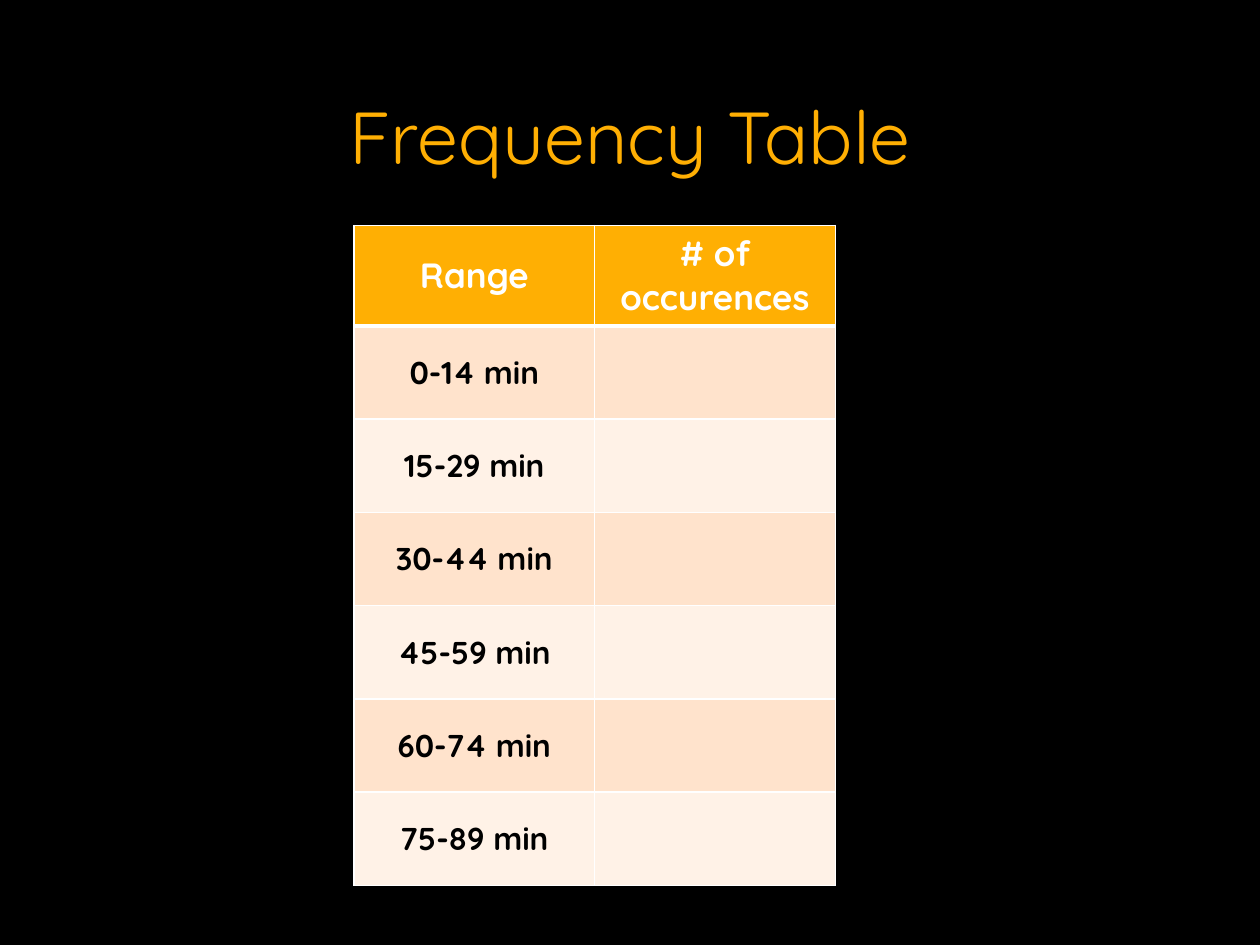
from dataclasses import dataclass

from lxml.etree import SubElement
from pptx import Presentation
from pptx.dml.color import RGBColor as Rgb
from pptx.enum.text import MSO_ANCHOR as Anchor, PP_ALIGN as Align
from pptx.oxml.ns import qn
from pptx.slide import Slide
from pptx.table import _Cell as Cell
from pptx.text.text import TextFrame
from pptx.util import Inches, Pt


@dataclass(frozen=True)
class Theme:
    font: str = "Quicksand"
    background: str = "000000"
    accent: str = "FFAF03"
    header_ink: str = "FFFFFF"
    body_ink: str = "000000"
    border: str = "FFFFFF"
    bands: tuple[str, str] = ("FFE3CC", "FFF2E7")
    title_size: int = 42
    header_size: int = 20
    body_size: int = 18
    thin: int = 1
    thick: int = 3


@dataclass(frozen=True)
class RowStyle:
    fill: str
    ink: str
    size: int
    top: int
    bottom: int


@dataclass(frozen=True)
class Grid:
    left: float = 2.81
    top: float = 1.79
    column: float = 1.91
    row: float = 0.74


THEME = Theme()
GRID = Grid()
WIDTH, HEIGHT = Inches(10), Inches(7.5)
HEADINGS = ("Range", "# of occurences")
BIN_MINUTES, BIN_COUNT = 15, 6


def write(frame: TextFrame, wording: str, size: int, ink: str, bold: bool) -> None:
    frame.text = wording
    paragraph = frame.paragraphs[0]
    paragraph.alignment = Align.CENTER
    formats = {"name": THEME.font, "size": Pt(size), "bold": bold}
    for attribute, value in formats.items():
        setattr(paragraph.font, attribute, value)
    paragraph.font.color.rgb = Rgb.from_string(ink)


def draw_borders(cell: Cell, top: int, bottom: int) -> None:
    """Add the four edges; they must come before the cell's fill."""
    properties = cell._tc.get_or_add_tcPr()
    edges = {"lnL": THEME.thin, "lnR": THEME.thin, "lnT": top, "lnB": bottom}
    for edge, width in edges.items():
        line = SubElement(properties, qn(f"a:{edge}"), w=str(Pt(width)))
        fill = SubElement(line, qn("a:solidFill"))
        SubElement(fill, qn("a:srgbClr"), val=THEME.border)


def row_style(index: int) -> RowStyle:
    if index == 0:
        return RowStyle(THEME.accent, THEME.header_ink, THEME.header_size,
                        THEME.thin, THEME.thick)
    return RowStyle(THEME.bands[(index - 1) % 2], THEME.body_ink, THEME.body_size,
                    THEME.thick if index == 1 else THEME.thin, THEME.thin)


def add_title(slide: Slide, wording: str) -> None:
    title = slide.shapes.title
    place = {"left": 0.067, "width": 0.866}
    for attribute, share in place.items():
        setattr(title, attribute, int(WIDTH * share))
    title.top, title.height = int(HEIGHT * 0.085), int(HEIGHT * 0.115)
    title.text_frame.vertical_anchor = Anchor.MIDDLE
    write(title.text_frame, wording, THEME.title_size, THEME.accent, bold=False)


def add_frequency_table(slide: Slide, rows: list[tuple[str, str]]) -> None:
    columns = len(HEADINGS)
    table = slide.shapes.add_table(
        len(rows), columns, Inches(GRID.left), Inches(GRID.top),
        Inches(GRID.column * columns), Inches(GRID.row * len(rows))).table
    for index, (row, wordings) in enumerate(zip(table.rows, rows)):
        row.height = Inches(GRID.row)
        style = row_style(index)
        for cell, wording in zip(row.cells, wordings):
            draw_borders(cell, style.top, style.bottom)
            cell.fill.solid()
            cell.fill.fore_color.rgb = Rgb.from_string(style.fill)
            cell.vertical_anchor = Anchor.MIDDLE
            write(cell.text_frame, wording, style.size, style.ink, bold=True)


def main() -> None:
    deck = Presentation()
    deck.slide_width, deck.slide_height = WIDTH, HEIGHT
    slide = deck.slides.add_slide(deck.slide_layouts[5])
    slide.background.fill.solid()
    slide.background.fill.fore_color.rgb = Rgb.from_string(THEME.background)

    starts = range(0, BIN_MINUTES * BIN_COUNT, BIN_MINUTES)
    bins = [(f"{start}-{start + BIN_MINUTES - 1} min", "") for start in starts]
    add_title(slide, "Frequency Table")
    add_frequency_table(slide, [HEADINGS, *bins])
    deck.save("out.pptx")


if __name__ == "__main__":
    main()
